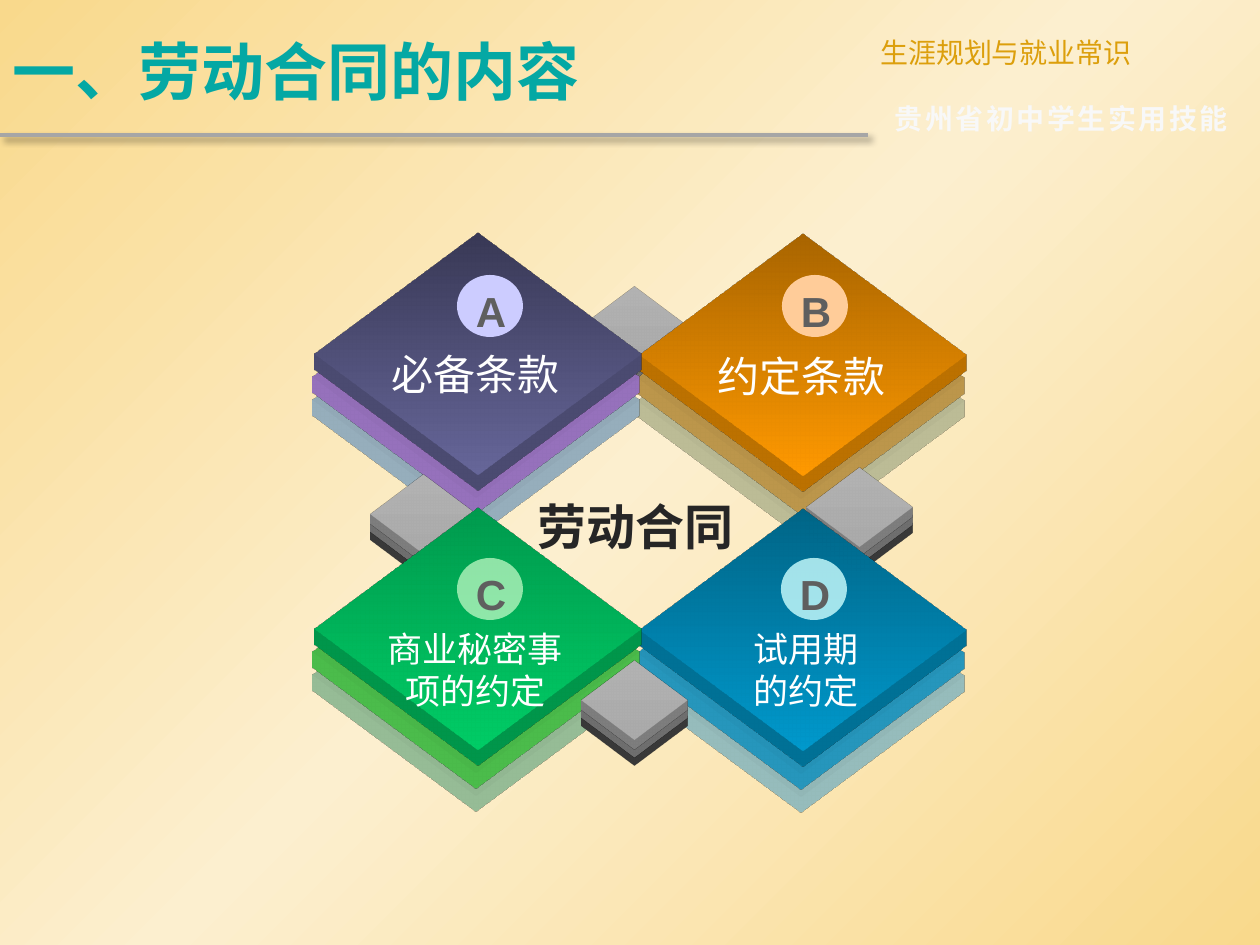
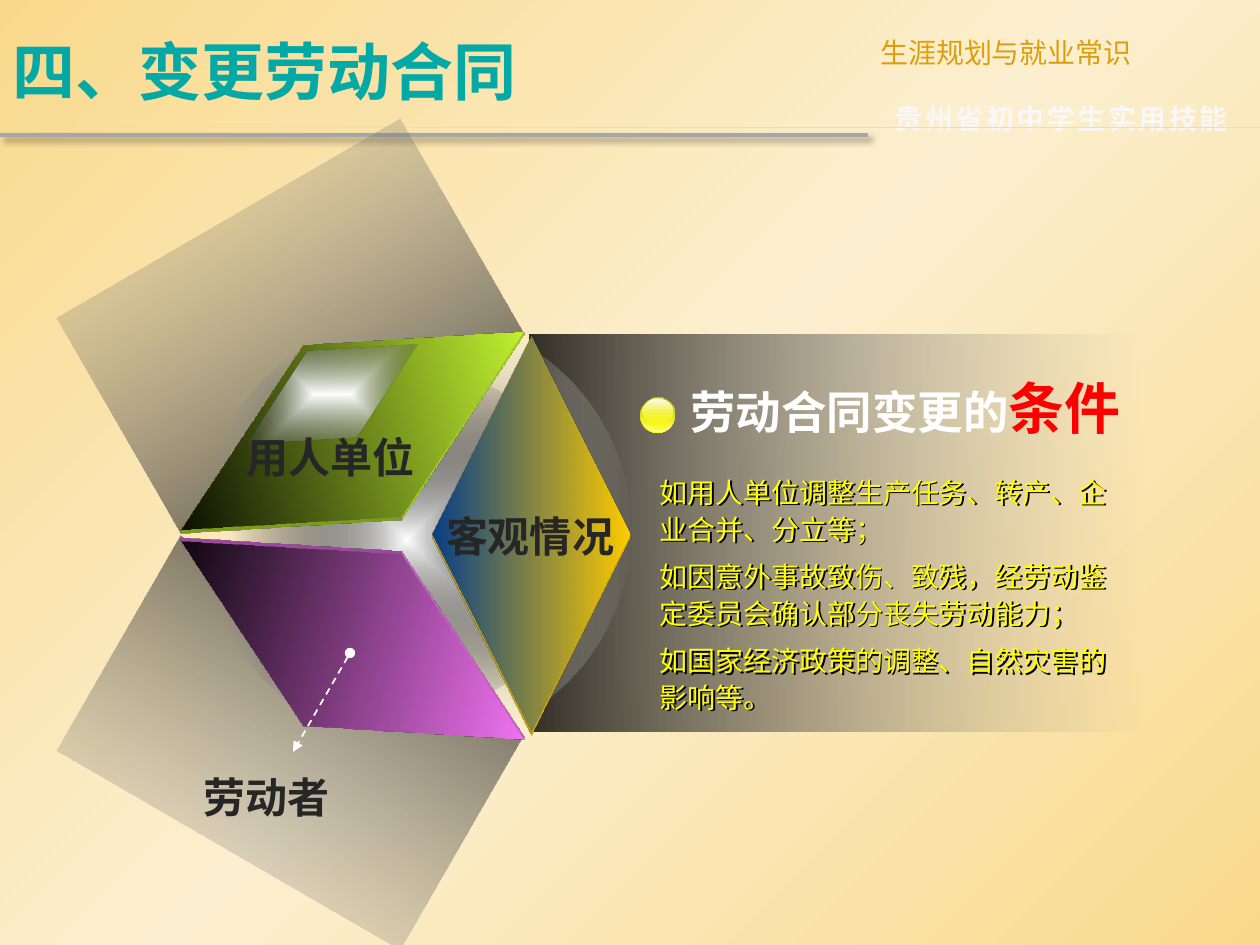
from lxml import etree
from pptx import Presentation
from pptx.dml.color import RGBColor
from pptx.enum.dml import MSO_LINE
from pptx.enum.shapes import MSO_CONNECTOR, MSO_SHAPE
from pptx.enum.text import MSO_ANCHOR, PP_ALIGN
from pptx.oxml import parse_xml
from pptx.oxml.ns import nsdecls, qn
from pptx.util import Pt

PX = 914400 / 126
FONT = "Noto Sans CJK SC"
DIAMOND, OVAL, RECTANGLE = MSO_SHAPE.DIAMOND, MSO_SHAPE.OVAL, MSO_SHAPE.RECTANGLE
STRAIGHT = MSO_CONNECTOR.STRAIGHT
DASH, DOT = MSO_LINE.DASH, MSO_LINE.ROUND_DOT
LEFT, CENTER, JUSTIFY = PP_ALIGN.LEFT, PP_ALIGN.CENTER, PP_ALIGN.JUSTIFY
TOP, MIDDLE = MSO_ANCHOR.TOP, MSO_ANCHOR.MIDDLE

TEAL = RGBColor(0x04, 0xA8, 0xA4)
GOLD = RGBColor(0xDC, 0x9F, 0x0C)
SAND = RGBColor(0xF9, 0xD9, 0x8C)
CREAM = RGBColor(0xFC, 0xEF, 0xCF)
WHITE = RGBColor(0xFF, 0xFF, 0xFF)
BLACK = RGBColor(0x00, 0x00, 0x00)
PALE = RGBColor(0xF8, 0xF8, 0xF8)
INK = RGBColor(0x26, 0x26, 0x26)
LETTER_GRAY = RGBColor(0x5F, 0x5F, 0x5F)
RULE_GRAY = RGBColor(0xA6, 0xA6, 0xA6)
DOT_GRAY = RGBColor(0xDD, 0xDD, 0xDD)
FADE_GRAY = RGBColor(0x8F, 0x8F, 0x8F)
RED = RGBColor(0xFF, 0x00, 0x00)
YELLOW = RGBColor(0xFF, 0xFF, 0x00)
OLIVE = RGBColor(0x76, 0x76, 0x00)
LEMON = RGBColor(0xCA, 0xCA, 0x00)
LIGHT_YELLOW = RGBColor(0xFF, 0xFF, 0xA6)
LIME = RGBColor(0xCC, 0xFF, 0x33)
PINK = RGBColor(0xFF, 0x79, 0xFF)
AMBER = RGBColor(0xFF, 0xCC, 0x00)
NAVY = RGBColor(0x07, 0x3E, 0x87)
LILAC = RGBColor(0xCC, 0xCC, 0xFF)
PEACH = RGBColor(0xFF, 0xCC, 0x99)
MINT = RGBColor(0xCC, 0xFF, 0xCC)
ICE = RGBColor(0xCC, 0xFF, 0xFF)

# Each stack: top start, top end, middle layer, base layer
GRAYS = [RGBColor.from_string(c) for c in ("B2B2B2", "ABABAB", "969696", "4D4D4D")]
PURPLES = [RGBColor.from_string(c) for c in ("393956", "666699", "CC99FF", "CCECFF")]
ORANGES = [RGBColor.from_string(c) for c in ("A96500", "FF9900", "FFCC66", "FFFFCC")]
GREENS = [RGBColor.from_string(c) for c in ("009B4E", "00CC66", "66FF66", "CCFFCC")]
BLUES = [RGBColor.from_string(c) for c in ("006587", "0099CC", "33CCFF", "CCFFFF")]


def paint(fill, properties, stops, angle=None, extrusion=None):
    """Fill with evenly spaced (colour, opacity) stops; no angle means from the centre.

    An extrusion is (side, depth in points, colour).
    """
    colors = []
    for color, opacity in stops:
        alpha = f'<a:alpha val="{opacity * 1000}"/>' if opacity < 100 else ""
        colors.append(f'<a:srgbClr val="{color}">{alpha}</a:srgbClr>')
    fill.gradient()
    if len(stops) == 1:
        new_fill = f'<a:solidFill {nsdecls("a")}>{colors[0]}</a:solidFill>'
    else:
        marks = "".join(f'<a:gs pos="{100000 * i // (len(stops) - 1)}">{color}</a:gs>'
                        for i, color in enumerate(colors))
        if angle is None:
            way = '<a:path path="shape"><a:fillToRect l="50000" t="50000" r="50000" b="50000"/></a:path>'
        else:
            way = f'<a:lin ang="{angle * 60000}" scaled="0"/>'
        new_fill = (f'<a:gradFill {nsdecls("a")} rotWithShape="1">'
                    f'<a:gsLst>{marks}</a:gsLst>{way}</a:gradFill>')
    properties.replace(properties.find(qn("a:gradFill")), parse_xml(new_fill))
    if extrusion:
        side, depth, color = extrusion
        properties.append(parse_xml(
            f'<a:scene3d {nsdecls("a")}><a:camera prst="legacyOblique{side}"/>'
            '<a:lightRig rig="legacyFlat3" dir="b"/></a:scene3d>'))
        properties.append(parse_xml(
            f'<a:sp3d {nsdecls("a")} extrusionH="{Pt(depth)}" prstMaterial="legacyMatte">'
            f'<a:extrusionClr><a:srgbClr val="{color}"/></a:extrusionClr></a:sp3d>'))


def add_text(slide, box, paragraphs, align=LEFT, anchor=TOP, inset=True, wrap=False,
             font=FONT, spacing=None):
    """Each paragraph is a list of (text, size, colour, bold) runs."""
    shape = slide.shapes.add_textbox(*[round(v * PX) for v in box])
    frame = shape.text_frame
    frame.word_wrap = wrap
    frame.vertical_anchor = anchor
    if not inset:
        frame.margin_left = frame.margin_right = frame.margin_top = frame.margin_bottom = 0
    for i, runs in enumerate(paragraphs):
        paragraph = frame.paragraphs[0] if i == 0 else frame.add_paragraph()
        paragraph.alignment = align
        paragraph.line_spacing = spacing
        for text, size, color, bold in runs:
            run = paragraph.add_run()
            run.text = text
            run.font.size = Pt(size)
            run.font.bold = bold
            run.font.color.rgb = color
            run.font.name = font
            etree.SubElement(run.font._element, qn("a:ea"), typeface=font)
    return shape


presentation = Presentation()
presentation.slide_width = round(1260 * PX)
presentation.slide_height = round(945 * PX)
layout = presentation.slide_layouts[6]
contents = presentation.slides.add_slide(layout)
changes = presentation.slides.add_slide(layout)

# Series name, kept on the shared layout
series = add_text(contents, (895, 102, 340, 34),
                  [[("贵州省初中学生实用技能", 16, PALE, True)]], inset=False)
series.text_frame.paragraphs[0].runs[0].font._element.set("spc", "150")
layout.shapes._spTree.append(series._element)

# Shared background, rule, course name and title
for slide, title in ((contents, "一、劳动合同的内容"), (changes, "四、变更劳动合同")):
    background = slide.background.fill
    paint(background, slide._element.find(".//" + qn("p:bgPr")),
          [(SAND, 100), (CREAM, 100), (SAND, 100)], 45)
    rule = slide.shapes.add_connector(STRAIGHT, 0, round(135 * PX), round(868 * PX), round(135 * PX))
    rule.line.color.rgb = RULE_GRAY
    rule.line.width = Pt(2.25)
    rule._element.spPr.append(parse_xml(
        f'<a:effectLst {nsdecls("a")}><a:outerShdw blurRad="50800" dist="38100" dir="2700000">'
        '<a:srgbClr val="000000"><a:alpha val="40000"/></a:srgbClr></a:outerShdw></a:effectLst>'))
    add_text(slide, (868, 29, 392, 47), [[("生涯规划与就业常识", 16, GOLD, False)]], JUSTIFY, wrap=True)
    add_text(slide, (0, 6, 868, 129), [[(title, 36, TEAL, True)]], anchor=MIDDLE, wrap=True)

# Slide 1: stacked tiles, drawn from base to top
BIG = (327, 242, 18, -2, 23)
SMALL = (106, 79, 11, 0, 8)
for stack_left, stack_top, (width, height, depth, shift, step), colors in (
        (582, 287, SMALL, GRAYS), (640, 234, BIG, ORANGES), (315, 233, BIG, PURPLES),
        (806, 468, SMALL, GRAYS), (640, 509, BIG, BLUES), (370, 475, SMALL, GRAYS),
        (315, 508, BIG, GREENS), (582, 661, SMALL, GRAYS)):
    for level in (2, 1, 0):
        box = (stack_left + (shift if level else 0), stack_top + level * step, width, height)
        color = colors[level + 1]
        tile = contents.shapes.add_shape(DIAMOND, *[round(v * PX) for v in box])
        tile.shadow.inherit = False
        tile.line.fill.background()
        stops = [(color, 100)] if level else [(colors[0], 100), (color, 100)]
        paint(tile.fill, tile._element.spPr, stops, 90, ("Bottom", depth, color))

# Slide 1: lettered badges and labels
for letter, left, top, color, opacity in (("A", 457, 275, LILAC, 100), ("B", 782, 275, PEACH, 100),
                                          ("C", 457, 558, MINT, 70), ("D", 781, 558, ICE, 80)):
    badge = contents.shapes.add_shape(OVAL, *[round(v * PX) for v in (left, top, 66, 62)])
    badge.shadow.inherit = False
    badge.line.fill.background()
    paint(badge.fill, badge._element.spPr, [(color, opacity)])
    add_text(contents, (left + 6, top + 4, 56, 63), [[(letter, 24, LETTER_GRAY, True)]],
             CENTER, font="Arial")

for box, lines, size, color, bold in (
        ((523, 490, 225, 72), ["劳动合同"], 28, INK, True),
        ((378, 342, 195, 64), ["必备条款"], 24, WHITE, False),
        ((704, 344, 195, 64), ["约定条款"], 24, WHITE, False),
        ((374, 621, 203, 97), ["商业秘密事", "项的约定"], 20, WHITE, False),
        ((741, 621, 131, 97), ["试用期", "的约定"], 20, WHITE, False)):
    add_text(contents, box, [[(line, size, color, bold)] for line in lines], CENTER)

# Slide 2: dotted rule
dotted = changes.shapes.add_connector(STRAIGHT, 0, round(127 * PX), round(1260 * PX), round(127 * PX))
dotted.line.color.rgb = DOT_GRAY
dotted.line.width = Pt(0.25)
dotted.line.dash_style = DOT
etree.SubElement(dotted._element.spPr, qn("a:effectLst"))

# Slide 2: panels, cube faces and glossy bullet
smoke = [(BLACK, 80), (FADE_GRAY, 0)]
glow = [(WHITE, 100), (BLACK, 0)]
for kind, box, rotation, stops, angle, extrusion in (
        (RECTANGLE, (530, 335, 615, 397), 0, smoke, 0, None),
        (OVAL, (203, 316, 427, 427), 0, [(BLACK, 100), (WHITE, 0)], None, None),
        (RECTANGLE, (166, 544, 248, 397), 120, smoke, 0, None),
        (RECTANGLE, (166, 127, 248, 397), 240, smoke, 0, None),
        (OVAL, (233, 365, 348, 348), 0, glow, None, None),
        (DIAMOND, (154, 331, 397, 198), 330, [(BLACK, 100), (LIME, 100)], 45, ("Bottom", 4, LIME)),
        (DIAMOND, (154, 541, 397, 198), 30, [(BLACK, 100), (PINK, 100)], 315, ("Top", 4, PINK)),
        (DIAMOND, (333, 435, 397, 198), 90, [(AMBER, 100), (NAVY, 100)], 0, ("Bottom", 4, AMBER)),
        (DIAMOND, (233, 345, 198, 99), 330, glow, None, None),
        (OVAL, (640, 398, 35, 35), 0, [(OLIVE, 100), (YELLOW, 100)], 90, None),
        (OVAL, (640, 398, 34, 34), 0, [(YELLOW, 0), (LIGHT_YELLOW, 100)], 90, None),
        (OVAL, (641, 398, 33, 32), 0, [(LEMON, 100), (YELLOW, 48)], 90, None),
        (OVAL, (643, 399, 29, 25), 0, [(WHITE, 100), (YELLOW, 38)], 90, None)):
    shape = changes.shapes.add_shape(kind, *[round(v * PX) for v in box])
    shape.rotation = rotation
    shape.shadow.inherit = False
    shape.line.fill.background()
    paint(shape.fill, shape._element.spPr, stops, angle, extrusion)

# Slide 2: arrow to the worker label
arrow = changes.shapes.add_connector(STRAIGHT, *[round(v * PX) for v in (350, 653, 293, 752)])
arrow.line.color.rgb = WHITE
arrow.line.width = Pt(1)
arrow.line.dash_style = DASH
outline = arrow._element.spPr.find(qn("a:ln"))
etree.SubElement(outline, qn("a:headEnd"), type="oval")
etree.SubElement(outline, qn("a:tailEnd"), type="triangle")
etree.SubElement(arrow._element.spPr, qn("a:effectLst"))

# Slide 2: party labels, heading and conditions
for label, left, top, width in (("用人单位", 247, 432, 170), ("劳动者", 204, 772, 127),
                                ("客观情况", 446, 511, 170)):
    add_text(changes, (left, top, width, 50), [[(label, 24, INK, True)]], inset=False)

add_text(changes, (690, 374, 437, 68),
         [[("劳动合同变更的", 26, WHITE, True), ("条件", 32, RED, True)]], inset=False)

for i, condition in enumerate(("如用人单位调整生产任务、转产、企业合并、分立等；",
                               "如因意外事故致伤、致残，经劳动鉴定委员会确认部分丧失劳动能力；",
                               "如国家经济政策的调整、自然灾害的影响等。")):
    item = add_text(changes, (660, 472 + 84 * i, 466, 74), [[(condition, 16, YELLOW, False)]],
                    inset=False, wrap=True, spacing=1.1)
    item._element.spPr.append(parse_xml(
        f'<a:effectLst {nsdecls("a")}><a:outerShdw dist="17961" dir="2700000">'
        '<a:srgbClr val="000000"/></a:outerShdw></a:effectLst>'))

presentation.save("out.pptx")
